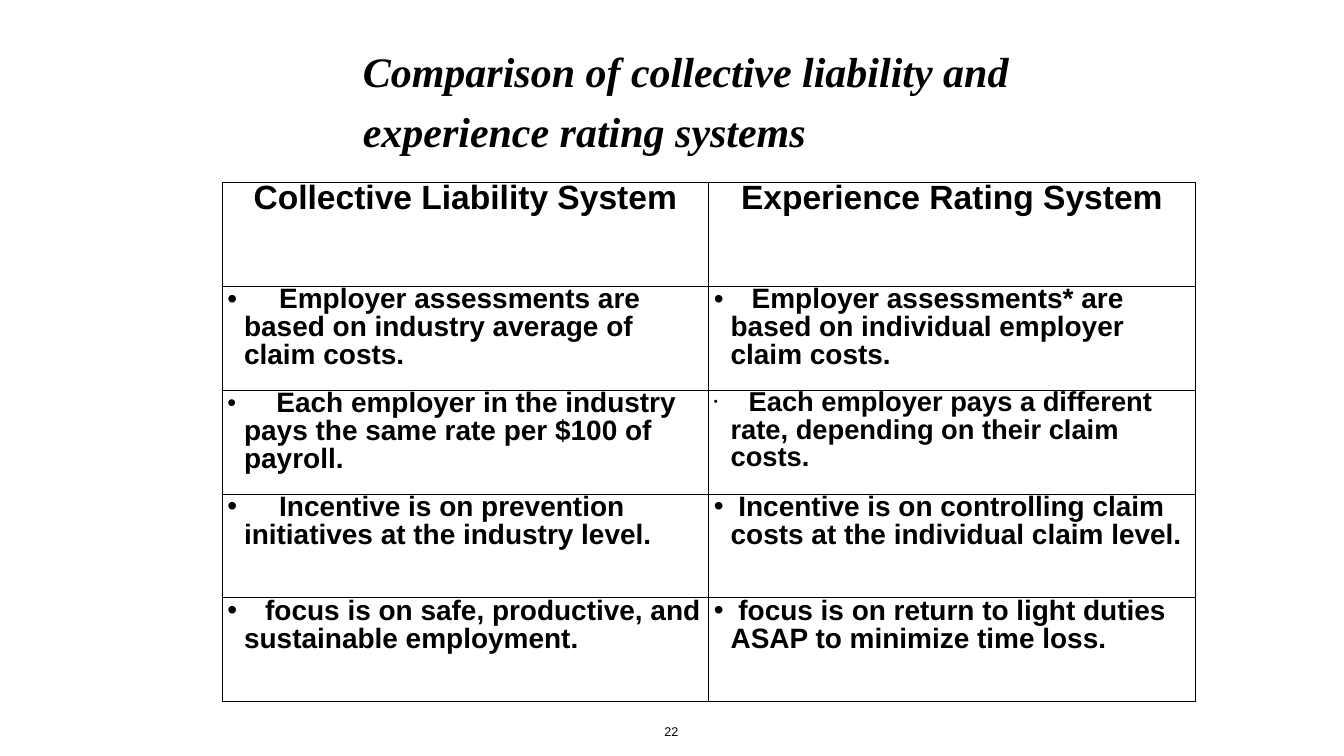
from dataclasses import dataclass

from lxml import etree
from pptx import Presentation
from pptx import util as u
from pptx.dml.color import RGBColor
from pptx.enum import text
from pptx.oxml import ns

Pt = u.Pt


@dataclass(frozen=True)
class Theme:
    ink: RGBColor = RGBColor(0, 0, 0)
    sans: str = "Arial"
    serif: str = "Times New Roman"
    title: float = 60
    head: float = 48
    body: float = 40
    small: float = 39
    page: float = 18


theme = Theme()


def style(para, name, size):
    para.font.name = name
    para.font.size = Pt(size)
    para.font.color.rgb = theme.ink


def tag(parent, name, **attrs):
    """Append a DrawingML element to parent."""
    return etree.SubElement(parent, ns.qn("a:" + name), attrs)


deck = Presentation()
deck.slide_width, deck.slide_height = Pt(1920), Pt(1080)
slide = deck.slides.add_slide(deck.slide_layouts[5])

# Table: each point is (text, extra gap after bullet, bullet percent, size)
heads = ["Collective Liability System", "Experience Rating System"]
points = [
    [("Employer assessments are based on industry average of claim costs.", 39, 100, theme.body),
     ("Employer assessments* are based on individual employer claim costs.", 19, 100, theme.body)],
    [("Each employer in the industry pays the same rate per $100 of payroll.", 35, 90, theme.body),
     ("Each employer pays a different rate, depending on their claim costs.", 15, 41, theme.small)],
    [("Incentive is on prevention initiatives at the industry level.", 39, 100, theme.body),
     ("Incentive is on controlling claim costs at the individual claim level.", 0, 100, theme.body)],
    [("focus is on safe, productive, and sustainable employment.", 19, 100, theme.body),
     ("focus is on return to light duties ASAP to minimize time loss.", 0, 100, theme.body)],
]
rows = len(points) + 1
table = slide.shapes.add_table(rows, 2, Pt(317.5), Pt(260), Pt(1390), Pt(148.5 * rows)).table
table.first_row = table.horz_banding = False

for cell in table.iter_cells():
    cell.fill.background()
    cell.margin_left = cell.margin_right = Pt(7.2)
    cell.margin_top = cell.margin_bottom = 0
    props = cell._tc.get_or_add_tcPr()
    for spot, side in enumerate(("lnL", "lnR", "lnT", "lnB")):
        line = tag(props, side, w=str(Pt(1)))
        tag(tag(line, "solidFill"), "srgbClr", val=str(theme.ink))
        props.insert(spot, line)

for col, words in enumerate(heads):
    para = table.cell(0, col).text_frame.paragraphs[0]
    para.alignment = text.PP_ALIGN.CENTER
    para.line_spacing = 0.9
    style(para, theme.sans, theme.head)
    para.font.bold = True
    para.add_run().text = words

for row, pair in enumerate(points, 1):
    for col, (words, gap, scale, size) in enumerate(pair):
        para = table.cell(row, col).text_frame.paragraphs[0]
        props = para._p.get_or_add_pPr()
        props.set("marL", str(Pt(24)))
        props.set("indent", str(Pt(-24)))
        tag(props, "buSzPct", val=str(scale * 1000))
        tag(props, "buFont", typeface=theme.sans)
        tag(props, "buChar", char="•")
        para.line_spacing = 0.9
        style(para, theme.sans, size)
        # One space, widened by letter spacing, sets the first line in
        lead = para.add_run()
        lead.text = " "
        lead.font.bold = False
        lead.font._element.set("spc", str(gap * 100))
        run = para.add_run()
        run.text = words
        run.font.bold = True

# Title
title = slide.shapes.title
title.left, title.top, title.width, title.height = Pt(514), Pt(65), Pt(942.5), Pt(157)
page = slide.shapes.add_textbox(Pt(944.5), Pt(1030), Pt(29), Pt(29.5))
for shape in (title, page):
    frame = shape.text_frame
    frame.margin_left = frame.margin_right = Pt(4.3)
    frame.margin_top = frame.margin_bottom = Pt(4.3)

frame = title.text_frame
frame.text = "Comparison of collective liability and\nexperience rating systems"
frame.vertical_anchor = text.MSO_ANCHOR.MIDDLE
frame.auto_size = text.MSO_AUTO_SIZE.NONE
for para in frame.paragraphs:
    para.alignment = text.PP_ALIGN.LEFT
    style(para, theme.serif, theme.title)
    para.font.bold = para.font.italic = True
frame.paragraphs[1].space_before = Pt(13)

# Page number
frame = page.text_frame
frame.text = "22"
frame.word_wrap = False
frame.vertical_anchor = text.MSO_ANCHOR.BOTTOM
para = frame.paragraphs[0]
para.alignment = text.PP_ALIGN.CENTER
style(para, theme.sans, theme.page)

deck.save("out.pptx")
